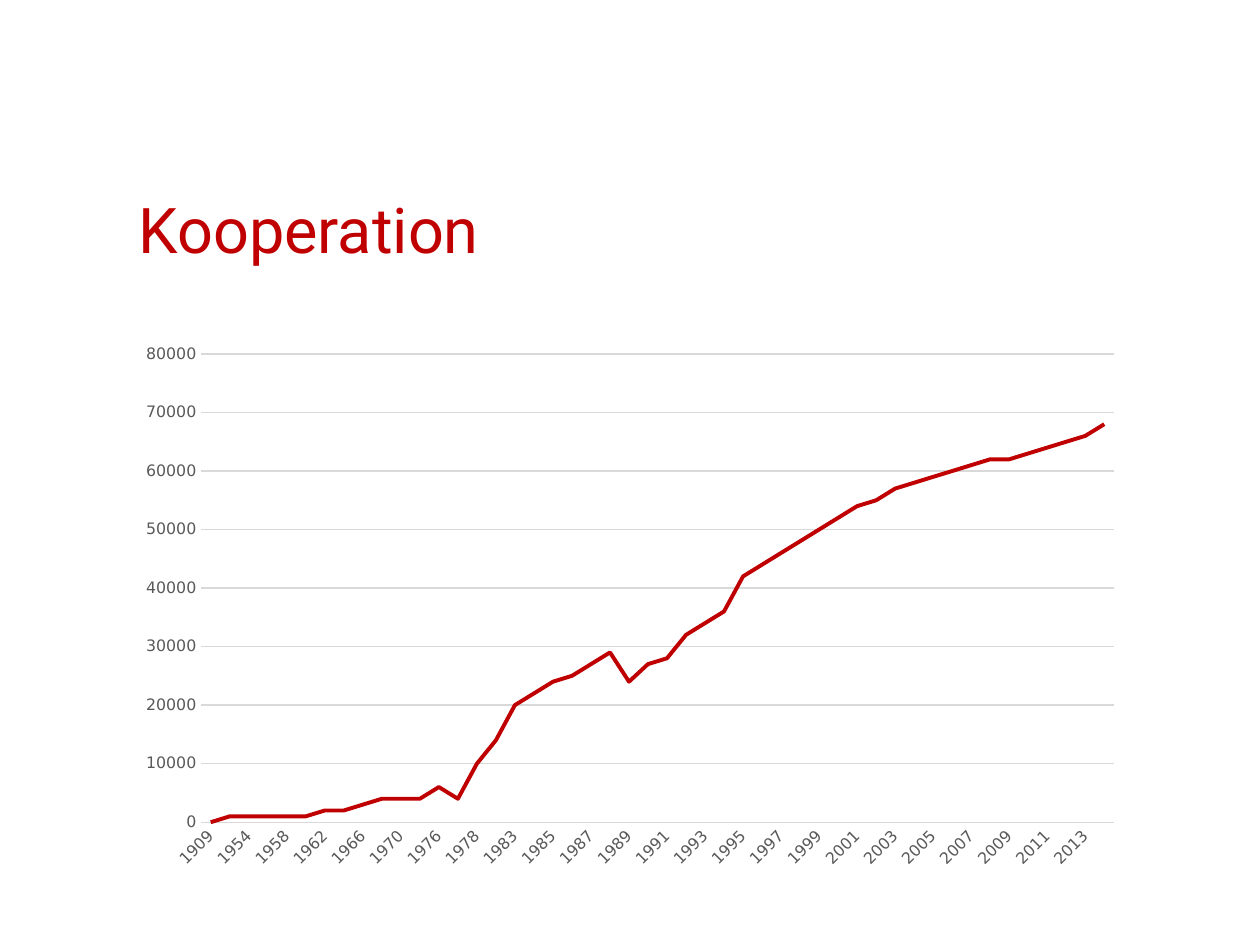
from pptx import Presentation
from pptx.chart.data import CategoryChartData
from pptx.dml.color import RGBColor
from pptx.enum.chart import XL_CHART_TYPE, XL_MARKER_STYLE, XL_TICK_MARK
from pptx.enum.text import MSO_ANCHOR, PP_ALIGN
from pptx.util import Inches, Pt

RED = RGBColor(0xC0, 0x00, 0x00)
GRAY = RGBColor(0x59, 0x59, 0x59)
PALE = RGBColor(0xD9, 0xD9, 0xD9)
BLACK = RGBColor(0x00, 0x00, 0x00)

YEARS = [1909, 1951, *range(1954, 1973, 2), 1976, 1977, 1978, 1981, *range(1983, 2015)]
COUNTS = [
    0, 1000, 1000, 1000, 1000, 1000, 2000, 2000, 3000, 4000, 4000, 4000,
    6000, 4000, 10000, 14000, 20000, 22000, 24000, 25000, 27000, 29000,
    24000, 27000, 28000, 32000, 34000, 36000, 42000, 44000, 46000, 48000,
    50000, 52000, 54000, 55000, 57000, 58000, 59000, 60000, 61000, 62000,
    62000, 63000, 64000, 65000, 66000, 68000,
]


class Deck:
    head = "Roboto"
    body = "DejaVu Sans"

    def __init__(self, wide, high):
        self.file = Presentation()
        self.file.slide_width = Inches(wide)
        self.file.slide_height = Inches(high)
        self.slide = self.file.slides.add_slide(self.file.slide_layouts[5])

    def style(self, font, name, size, color):
        font.name = name
        font.size = Pt(size)
        font.color.rgb = color

    def title(self, text, left, top, width, height):
        box = self.slide.shapes.title
        box.left, box.top = Inches(left), Inches(top)
        box.width, box.height = Inches(width), Inches(height)
        frame = box.text_frame
        frame.vertical_anchor = MSO_ANCHOR.BOTTOM
        para = frame.paragraphs[0]
        para.alignment = PP_ALIGN.LEFT
        run = para.add_run()
        run.text = text
        self.style(run.font, self.head, 36, RED)

    def axis(self, axis):
        axis.major_tick_mark = XL_TICK_MARK.NONE
        axis.minor_tick_mark = XL_TICK_MARK.NONE
        self.style(axis.tick_labels.font, self.body, 9, GRAY)

    def rule(self, line, color, width):
        line.color.rgb = color
        line.width = Pt(width)

    def chart(self, cats, name, vals, left, top, width, height):
        data = CategoryChartData(number_format="General")
        data.categories = [str(cat) for cat in cats]
        data.add_series(name, vals)
        chart = self.slide.shapes.add_chart(
            XL_CHART_TYPE.LINE, Inches(left), Inches(top),
            Inches(width), Inches(height), data).chart
        self.style(chart.font, self.body, 10, BLACK)
        chart.has_legend = False
        chart.has_title = False
        plot = chart.plots[0]
        plot.vary_by_categories = False
        line = plot.series[0]
        line.smooth = False
        line.marker.style = XL_MARKER_STYLE.NONE
        self.rule(line.format.line, RED, 2.25)
        base, side = chart.category_axis, chart.value_axis
        self.axis(base)
        self.axis(side)
        self.rule(base.format.line, PALE, 0.75)
        base.tick_labels.font
        base._element.txPr.bodyPr.set("rot", "-2700000")
        side.format.line.fill.background()
        side.has_major_gridlines = True
        self.rule(side.major_gridlines.format.line, PALE, 0.75)
        side.minimum_scale, side.maximum_scale = 0, 80000
        side.major_unit = 10000

    def save(self):
        self.file.save("out.pptx")


def main():
    deck = Deck(10, 7.5)
    deck.title("Kooperation", 1, 0.91, 8, 1.25)
    deck.chart(YEARS, "Series 1", COUNTS, 1, 2.65, 8, 4.33)
    deck.save()


if __name__ == "__main__":
    main()
